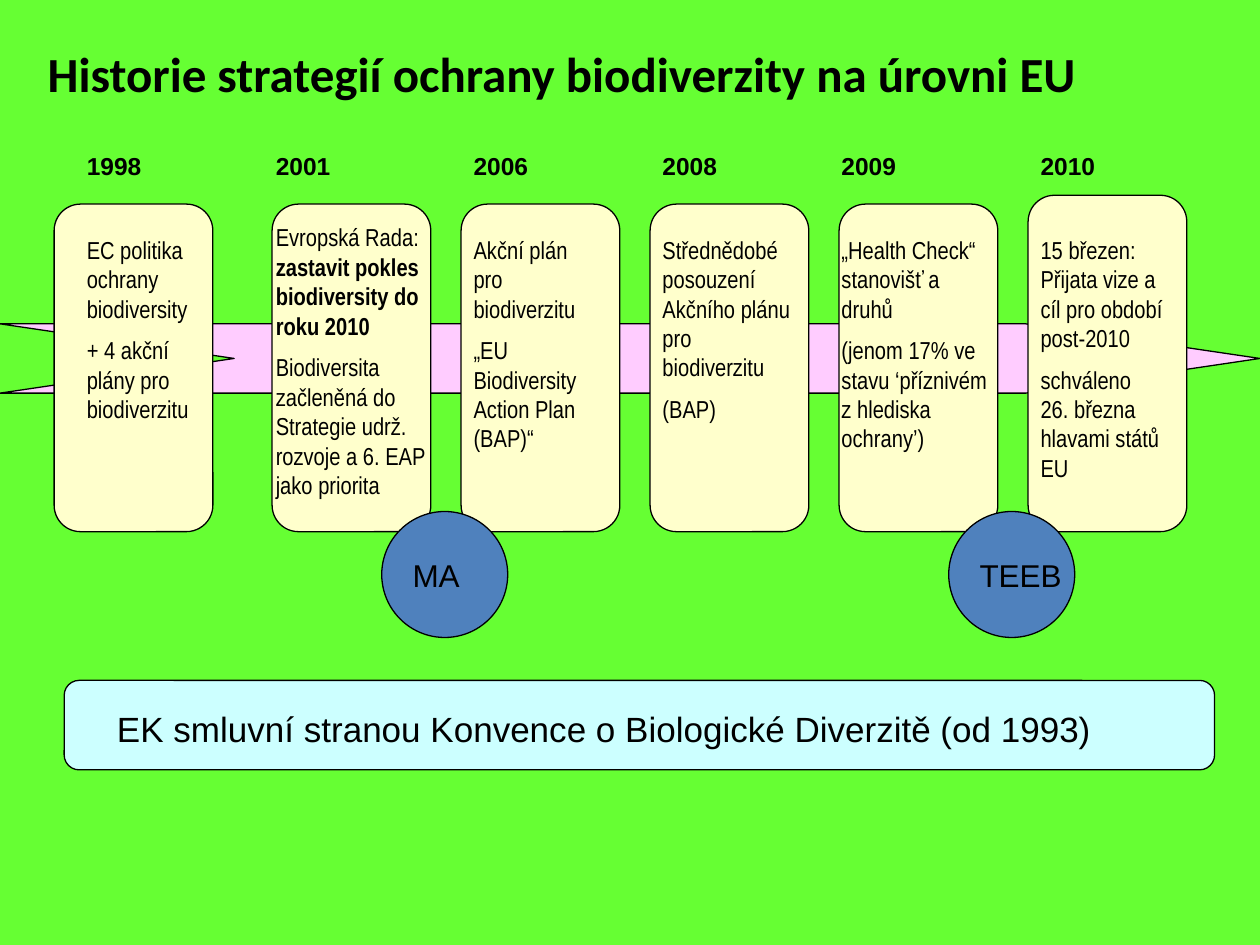
from pptx import Presentation
from pptx.dml.color import RGBColor
from pptx.enum.shapes import MSO_SHAPE
from pptx.enum.text import MSO_ANCHOR
from pptx.util import Inches, Pt

GREEN = RGBColor(0x66, 0xFF, 0x33)
PINK = RGBColor(0xFF, 0xCC, 0xFF)
CREAM = RGBColor(0xFF, 0xFF, 0xCC)
AQUA = RGBColor(0xCC, 0xFF, 0xFF)
BLUE = RGBColor(0x4F, 0x81, 0xBD)
BLACK = RGBColor(0, 0, 0)

CARD_W = 1.26
CARD_BOTTOM = 4.22
CARD_TOP = 1.62
FIRST_X = 0.43
GRID_X = 2.16
PITCH = 1.5
TEXT_TOP = 1.15
GAP = 7

MILESTONES = [
    ("1998", [[("EC politika ochrany biodiversity", False)],
              [("+ 4 akční plány pro biodiverzitu", False)]],
     {"shift": 0.16}),
    ("2001", [[("Evropská Rada: ", False),
               ("zastavit pokles biodiversity do roku 2010", True)],
              [("Biodiversita začleněná do Strategie udrž. rozvoje a 6. EAP "
                "jako priorita", False)]],
     {"shift": -0.07, "width": 1.42, "lead": 24}),
    ("2006", [[("Akční plán pro biodiverzitu", False)],
              [("„EU Biodiversity Action Plan (BAP)“", False)]], {}),
    ("2008", [[("Střednědobé posouzení Akčního plánu pro biodiverzitu", False)],
              [("(BAP)", False)]],
     {"width": CARD_W}),
    ("2009", [[("„Health Check“ stanovišť a druhů", False)],
              [("(jenom 17% ve stavu ‘příznivém z hlediska ochrany’)", False)]],
     {"shift": -0.08, "width": 1.42}),
    ("2010", [[("15 březen: Přijata vize a cíl pro období post-2010", False)],
              [("schváleno 26. března hlavami států EU", False)]],
     {"top": 1.55}),
]


def style(p, size, name="Arial", bold=False):
    p.font.size = Pt(size)
    p.font.name = name
    p.font.bold = bold
    p.font.color.rgb = BLACK


def add_panel(s, kind, x, y, w, h, color):
    sp = s.shapes.add_shape(kind, Inches(x), Inches(y), Inches(w), Inches(h))
    sp.shadow.inherit = False
    sp.fill.solid()
    sp.fill.fore_color.rgb = color
    sp.line.color.rgb = BLACK
    sp.line.width = Pt(0.75)
    return sp


def add_text(s, x, y, w, h):
    tf = s.shapes.add_textbox(Inches(x), Inches(y), Inches(w), Inches(h)).text_frame
    tf.word_wrap = True
    return tf


def add_line(s, x, y, w, h, text, size, name="Arial", bold=False):
    tf = add_text(s, x, y, w, h)
    tf.vertical_anchor = MSO_ANCHOR.MIDDLE
    p = tf.paragraphs[0]
    p.text = text
    style(p, size, name, bold)


def add_milestone(s, x, year, body, shift=0, width=1.18, lead=31, top=CARD_TOP):
    add_panel(s, MSO_SHAPE.ROUNDED_RECTANGLE, x, top, CARD_W, CARD_BOTTOM - top, CREAM)
    tf = add_text(s, x + shift, TEXT_TOP, width, 2.8)
    p = tf.paragraphs[0]
    p.text = year
    style(p, 14, bold=True)
    for i, runs in enumerate(body):
        p = tf.add_paragraph()
        p.space_before = Pt(GAP if i else lead)
        style(p, 14, "Arial Narrow")
        for text, bold in runs:
            r = p.add_run()
            r.text = text
            r.font.bold = bold


def add_circle(s, x, label):
    sp = add_panel(s, MSO_SHAPE.OVAL, x, 4.06, 1, 1, BLUE)
    tf = sp.text_frame
    tf.word_wrap = False
    tf.vertical_anchor = MSO_ANCHOR.MIDDLE
    p = tf.paragraphs[0]
    p.text = label
    p.alignment = 1
    style(p, 18)


def main():
    prs = Presentation()
    prs.slide_width, prs.slide_height = Inches(10), Inches(7.5)
    s = prs.slides.add_slide(prs.slide_layouts[6])
    s.background.fill.solid()
    s.background.fill.fore_color.rgb = GREEN

    arrow = add_panel(s, MSO_SHAPE.CHEVRON, 0, 2.57, 10, 0.55, PINK)
    arrow.adjustments[0] = 3.38
    add_line(s, 0.28, 0.14, 9.18, 0.87,
             "Historie strategií ochrany biodiverzity na úrovni EU", 28, "Calibri", True)
    for i, (year, body, options) in enumerate(MILESTONES):
        x = GRID_X + (i - 1) * PITCH if i else FIRST_X
        add_milestone(s, x, year, body, **options)
    for column, label in ((0, "MA"), (3, "TEEB")):
        add_circle(s, GRID_X + 0.87 + column * PITCH, label)
    add_panel(s, MSO_SHAPE.ROUNDED_RECTANGLE, 0.51, 5.4, 9.13, 0.71, AQUA)
    add_line(s, 0.83, 5.56, 8.19, 0.44,
             "EK smluvní stranou Konvence o Biologické Diverzitě (od 1993)", 20)
    prs.save("out.pptx")


if __name__ == "__main__":
    main()
